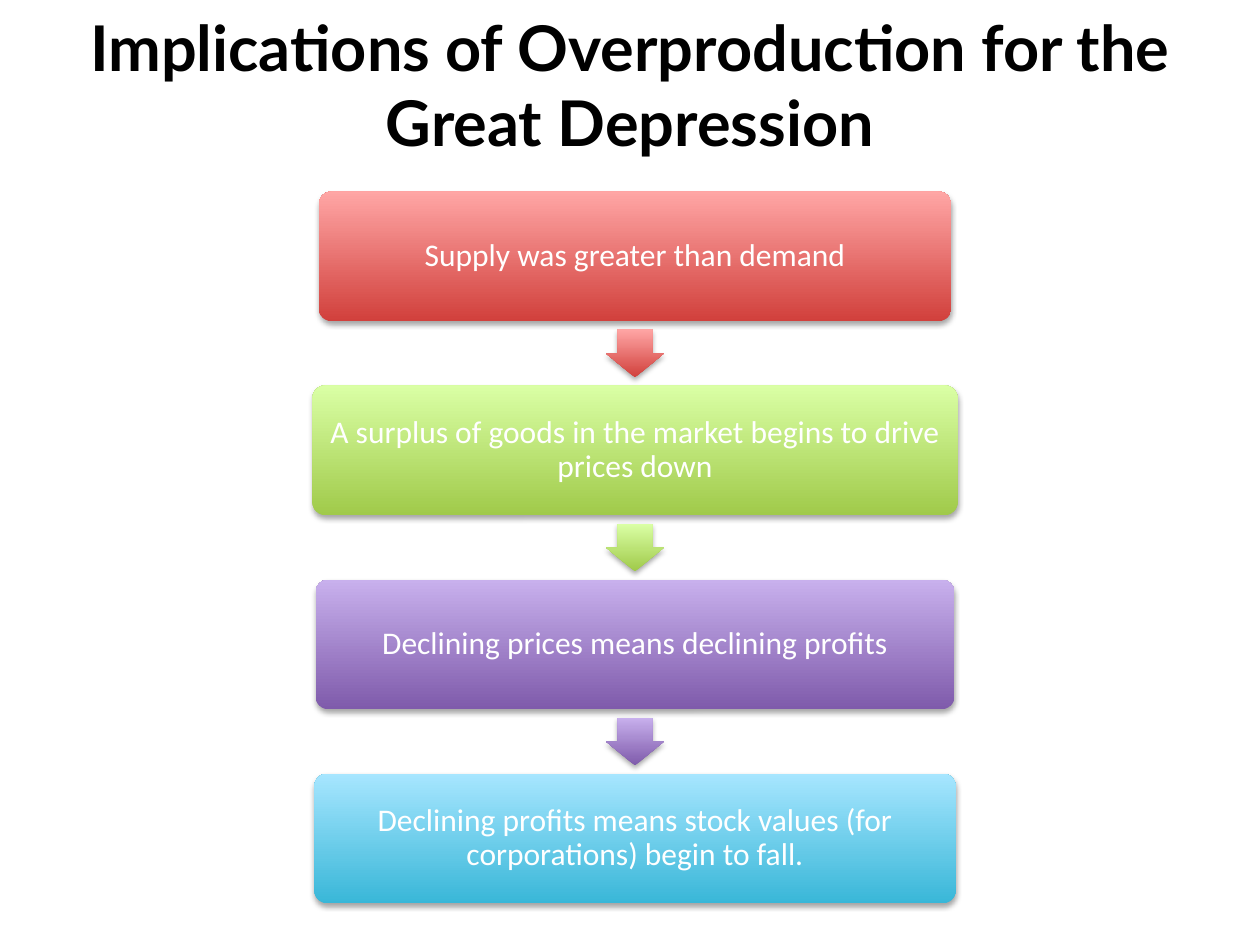
from lxml import etree
from pptx import Presentation
from pptx.dml.color import RGBColor
from pptx.enum.shapes import MSO_SHAPE
from pptx.enum.text import MSO_ANCHOR, MSO_AUTO_SIZE, PP_ALIGN
from pptx.oxml.ns import qn
from pptx.util import Inches, Pt

ROUNDED = MSO_SHAPE.ROUNDED_RECTANGLE
DOWN_ARROW = MSO_SHAPE.DOWN_ARROW
MIDDLE = MSO_ANCHOR.MIDDLE
NO_AUTOFIT = MSO_AUTO_SIZE.NONE
CENTER = PP_ALIGN.CENTER

TITLE = "Implications of Overproduction for the Great Depression"
# text, box width, bottom colour, top colour
STEPS = [
    ("Supply was greater than demand", 5.02, "D1403C", "FFA6A5"),
    ("A surplus of goods in the market begins to drive prices down",
     5.12, "A0CA4A", "DAFFA5"),
    ("Declining prices means declining profits", 5.07, "7F5BAB", "C8B0ED"),
    ("Declining profits means stock values (for corporations) begin to fall.",
     5.09, "39B7D8", "A7E6FF"),
]
STEP_HEIGHT = 1.03
ARROW_WIDTH, ARROW_HEIGHT = 0.46, 0.38


def color(hex_string):
    return RGBColor.from_string(hex_string)


def set_font(para, name, size, hex_string, bold=False):
    para.alignment = CENTER
    para.font.name = name
    para.font.size = Pt(size)
    para.font.bold = bold
    para.font.color.rgb = color(hex_string)


def add_soft_shadow(shape):
    shape.shadow.inherit = False
    effects = shape._element.spPr.find(qn("a:effectLst"))
    shadow = etree.SubElement(
        effects, qn("a:outerShdw"), blurRad=str(Pt(3.1)), dist=str(Pt(1.8)),
        dir="5400000", rotWithShape="0")
    black = etree.SubElement(shadow, qn("a:srgbClr"), val="000000")
    etree.SubElement(black, qn("a:alpha"), val="35000")


def add_glossy_shape(page, kind, center, top, width, height, bottom_color, top_color):
    """Add a shape centred on a vertical axis, shaded from bottom to top."""
    shape = page.shapes.add_shape(
        kind, Inches(center - width / 2), Inches(top), Inches(width), Inches(height))
    shape.fill.gradient()
    shape.fill.gradient_angle = 90
    for stop, hex_string in zip(shape.fill.gradient_stops, (bottom_color, top_color)):
        stop.color.rgb = color(hex_string)
    shape.line.fill.background()
    add_soft_shadow(shape)
    return shape


def add_title(page, left, top, width, height):
    title = page.shapes.title
    title.left, title.top = Inches(left), Inches(top)
    title.width, title.height = Inches(width), Inches(height)
    frame = title.text_frame
    frame.text = TITLE
    frame.word_wrap = True
    frame.auto_size = NO_AUTOFIT
    frame.vertical_anchor = MIDDLE
    set_font(frame.paragraphs[0], "Lato", 36, "000000", bold=True)


def add_step(page, center, top, text, width, colors):
    box = add_glossy_shape(page, ROUNDED, center, top, width, STEP_HEIGHT, *colors)
    box.adjustments[0] = 0.1
    frame = box.text_frame
    frame.text = text
    frame.word_wrap = True
    frame.vertical_anchor = MIDDLE
    frame.margin_left = frame.margin_right = Inches(0.1)
    frame.margin_top = frame.margin_bottom = Inches(0.1)
    para = frame.paragraphs[0]
    para.line_spacing = 0.9
    set_font(para, "Calibri", 18, "FFFFFF")


def add_flow(page, center, top, height):
    """Stack the steps evenly over the height, with an arrow in each gap."""
    pitch = (height - STEP_HEIGHT) / (len(STEPS) - 1)
    arrow_offset = (STEP_HEIGHT + pitch - ARROW_HEIGHT) / 2
    for index, (text, width, *colors) in enumerate(STEPS):
        step_top = top + index * pitch
        add_step(page, center, step_top, text, width, colors)
        if index < len(STEPS) - 1:
            arrow = add_glossy_shape(
                page, DOWN_ARROW, center, step_top + arrow_offset,
                ARROW_WIDTH, ARROW_HEIGHT, *colors)
            arrow.adjustments[0] = 0.6
            arrow.adjustments[1] = 0.5


def main():
    deck = Presentation()
    deck.slide_width, deck.slide_height = Inches(10), Inches(7.5)
    page = deck.slides.add_slide(deck.slide_layouts[5])
    add_title(page, 0, 0.04, 10, 1.25)
    add_flow(page, center=5.04, top=1.52, height=5.65)
    deck.save("out.pptx")


if __name__ == "__main__":
    main()
